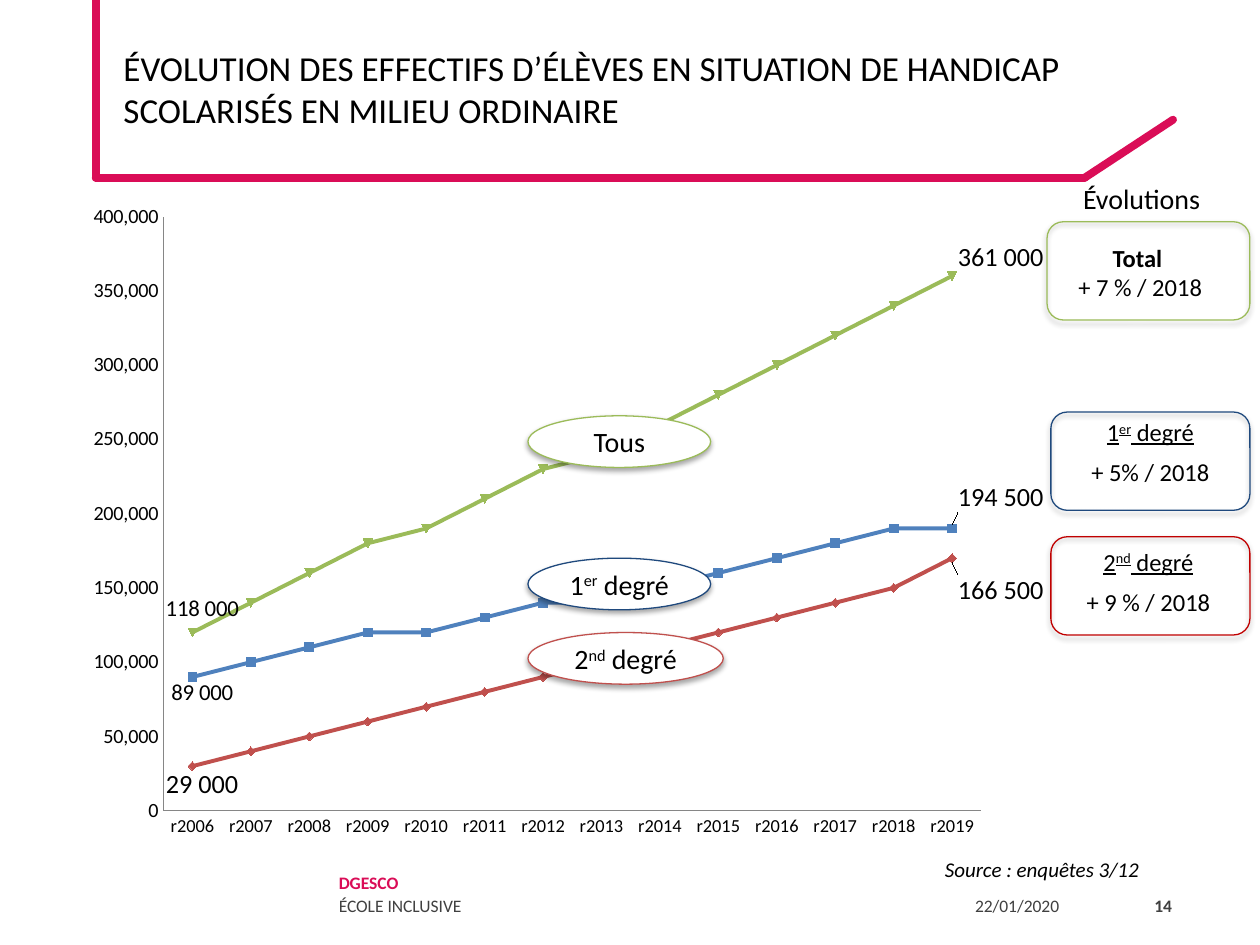
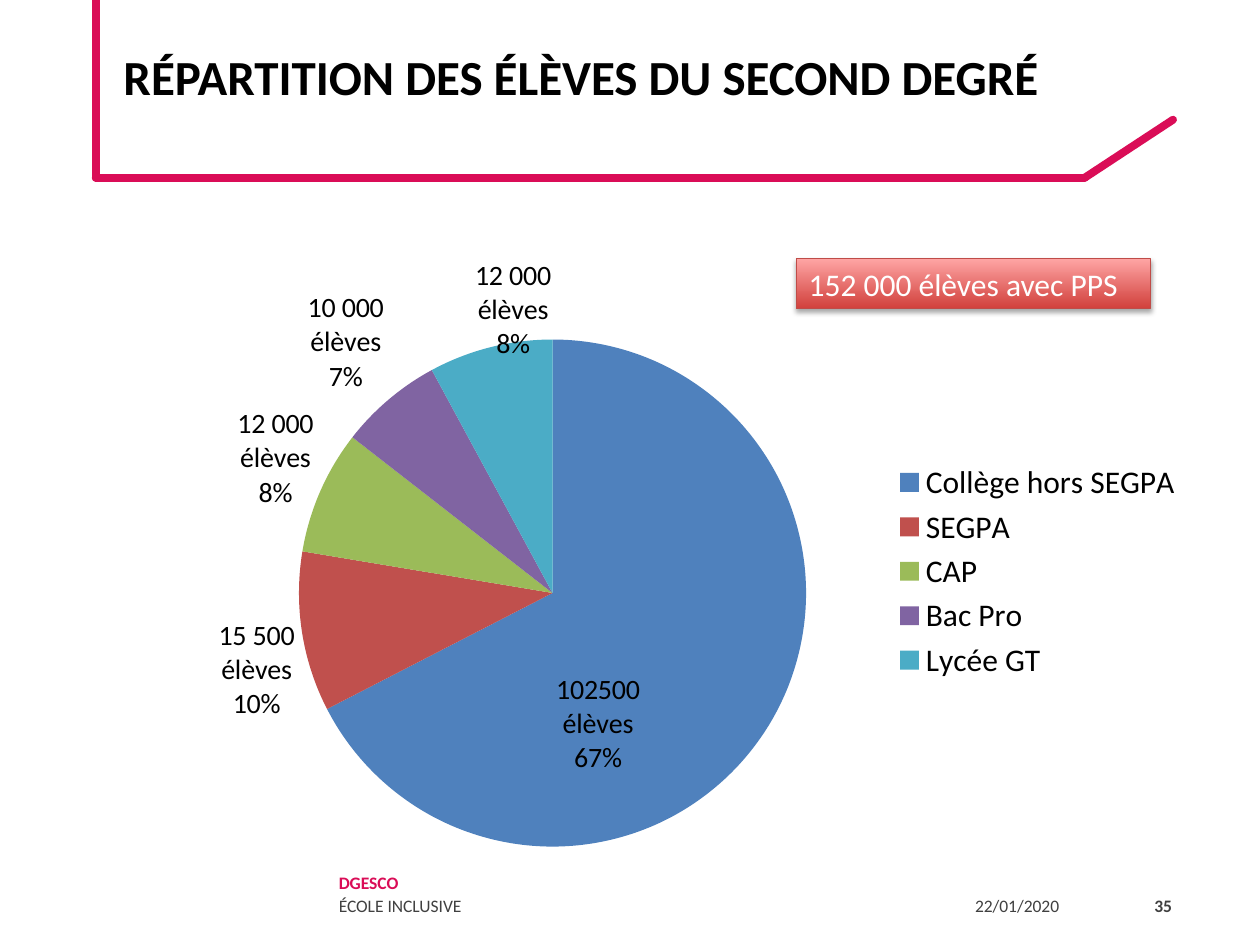
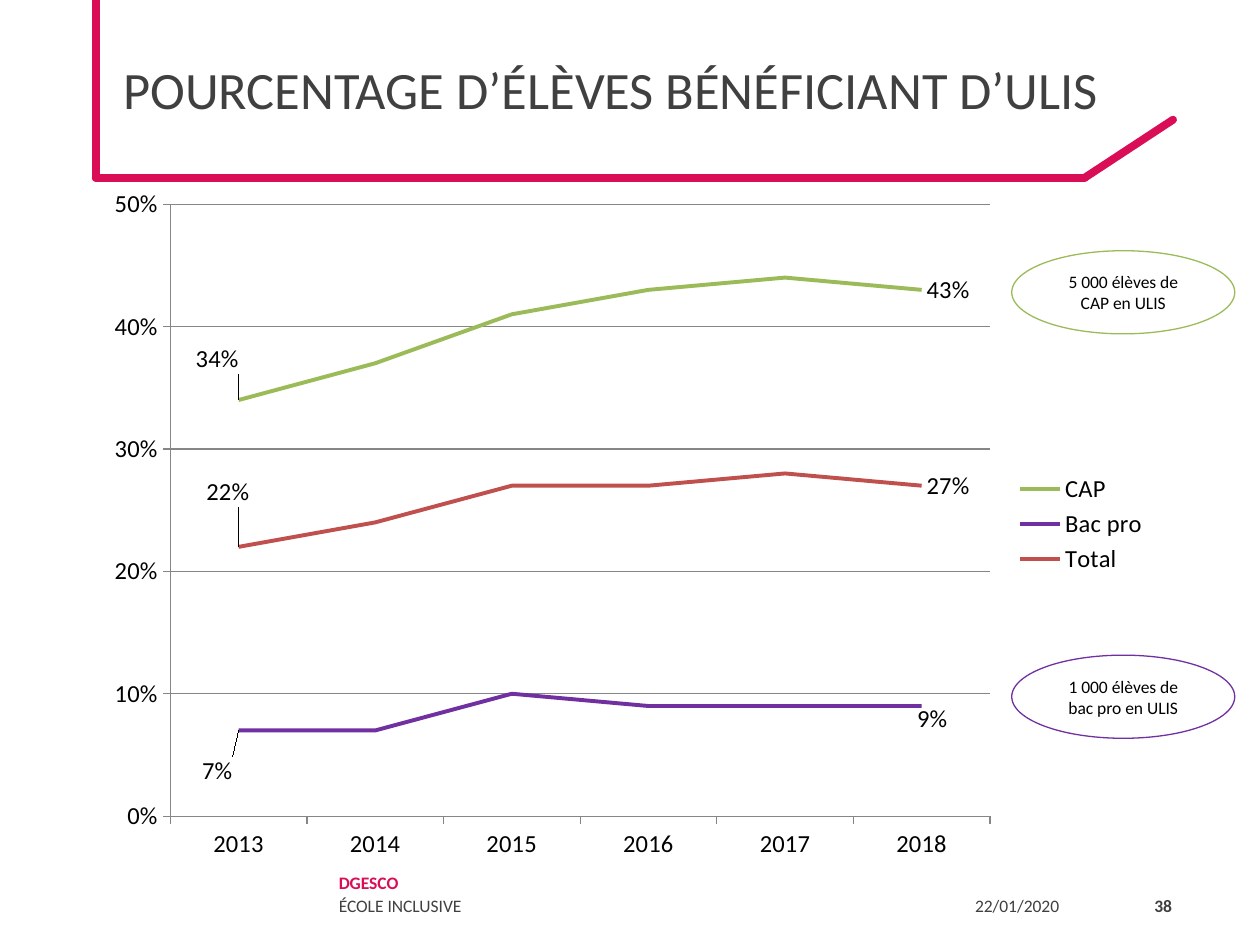
from lxml import etree
from pptx import Presentation
from pptx.chart.data import CategoryChartData
from pptx.dml.color import RGBColor
from pptx.enum.chart import XL_CHART_TYPE as Chart
from pptx.enum.chart import XL_LABEL_POSITION as Place
from pptx.enum.chart import XL_LEGEND_POSITION as LegendPlace
from pptx.enum.chart import XL_TICK_MARK as Tick
from pptx.enum.shapes import MSO_CONNECTOR, MSO_SHAPE
from pptx.enum.text import MSO_ANCHOR as Anchor
from pptx.enum.text import PP_ALIGN as Align
from pptx.oxml import parse_xml
from pptx.oxml.ns import nsdecls, qn
from pptx.util import Inches, Pt

FONT = "Calibri"
BLACK = RGBColor(0x00, 0x00, 0x00)
WHITE = RGBColor(0xFF, 0xFF, 0xFF)
DARK = RGBColor(0x40, 0x40, 0x40)
GREY = RGBColor(0x86, 0x86, 0x86)
PINK = RGBColor(0xDA, 0x0D, 0x57)
BLUE = RGBColor(0x4F, 0x81, 0xBD)
NAVY = RGBColor(0x1F, 0x49, 0x7D)
RED = RGBColor(0xC0, 0x50, 0x4D)
DARK_RED = RGBColor(0xC0, 0x00, 0x00)
GREEN = RGBColor(0x9B, 0xBB, 0x59)
MAUVE = RGBColor(0x80, 0x64, 0xA2)
PURPLE = RGBColor(0x70, 0x30, 0xA0)
TEAL = RGBColor(0x4B, 0xAC, 0xC6)
BANNER_LINE = RGBColor(0xBF, 0x4C, 0x48)
BANNER_STOPS = [RGBColor(0xD1, 0x40, 0x3C), RGBColor(0xFF, 0xA6, 0xA5)]

SHADOW = (
    f'<a:effectLst {nsdecls("a")}><a:outerShdw blurRad="39370" dist="22860" dir="5400000" '
    'rotWithShape="0"><a:srgbClr val="000000"><a:alpha val="35000"/></a:srgbClr>'
    "</a:outerShdw></a:effectLst>"
)
LABEL_SIZE = (
    f'<c:extLst {nsdecls("c")}><c:ext uri="{{CE6537A1-D6FC-4f65-9D91-7224C49458BB}}" '
    'xmlns:c15="http://schemas.microsoft.com/office/drawing/2012/chart"><c15:layout>'
    '<c:manualLayout><c:w val="0.13"/><c:h val="0.1"/></c:manualLayout>'
    "</c15:layout></c:ext></c:extLst>"
)


def write_text(frame, paragraphs, size=14, color=BLACK, bold=False, italic=False,
               align=Align.LEFT, anchor=Anchor.TOP, after=0, spacing=None, wrap=True):
    """Each paragraph is a string or a list of (text, run format) pairs."""
    frame.word_wrap = wrap
    frame.vertical_anchor = anchor
    for number, runs in enumerate(paragraphs):
        paragraph = frame.add_paragraph() if number else frame.paragraphs[0]
        paragraph.alignment = align
        paragraph.space_after = Pt(after)
        if spacing:
            paragraph.line_spacing = Pt(spacing)
        for text, style in [(runs, {})] if isinstance(runs, str) else runs:
            run = paragraph.add_run()
            run.text = text
            run.font.name = FONT
            run.font.size = Pt(size)
            run.font.bold = style.get("bold", bold)
            run.font.italic = italic
            run.font.underline = style.get("underline", False)
            run.font.color.rgb = style.get("color", color)
            if style.get("raised"):
                run.font._element.set("baseline", "30000")


def draw_chart(slide, kind, box, categories, series_list, plot_box, size,
               number_format="General", legend_size=None):
    """A series is (name, values, colours, labels);
    a label is (point, lines, place, size, shift x, shift y)."""
    data = CategoryChartData(number_format=number_format)
    data.categories = categories
    for name, values, *_ in series_list:
        data.add_series(name, values)
    chart = slide.shapes.add_chart(kind, *map(Inches, box), data).chart
    chart.has_title = False
    chart.font.name = FONT
    chart.font.size = Pt(size)
    chart.font.color.rgb = BLACK
    chart.has_legend = legend_size is not None
    if chart.has_legend:
        chart.legend.position = LegendPlace.RIGHT
        chart.legend.include_in_layout = False
        chart.legend.font.size = Pt(legend_size)
    is_pie = kind == Chart.PIE
    plot = chart.plots[0]
    plot.vary_by_categories = is_pie

    plot_area = chart._chartSpace.chart.plotArea
    for layout in plot_area.findall(qn("c:layout")):
        plot_area.remove(layout)
    layouts = [(plot_area, 0, plot_box)]
    for series, (_, _, colors, labels) in zip(plot.series, series_list):
        if is_pie:
            for number, color in enumerate(colors):
                fill = series.points[number].format.fill
                fill.solid()
                fill.fore_color.rgb = color
        else:
            series.smooth = False
            series.format.line.color.rgb = colors[0]
            series.format.line.width = Pt(2.25)
            if kind == Chart.LINE_MARKERS:
                series.marker.format.fill.solid()
                series.marker.format.fill.fore_color.rgb = colors[0]
                series.marker.format.line.color.rgb = colors[0]
        series.data_labels.show_value = is_pie
        series.data_labels.show_percentage = is_pie
        for point, lines, place, label_size, *shift in labels:
            label = series.points[point].data_label
            if lines:
                write_text(label.text_frame, lines, size=label_size, align=Align.CENTER)
            else:
                label.font.size = Pt(label_size)
            label.position = place
            element = series.data_labels._element.xpath(f'c:dLbl[c:idx/@val="{point}"]')[0]
            layouts.append((element, 1, shift))
            if lines and len(lines) == 2:
                element.append(parse_xml(LABEL_SIZE))

    # Manual layouts of the plot area and of the labels
    for parent, index, numbers in layouts:
        layout = parse_xml(f'<c:layout {nsdecls("c")}><c:manualLayout/></c:layout>')
        settings = list(zip("xywh", numbers))
        if parent is plot_area:
            settings = [("layoutTarget", "inner"), ("xMode", "edge"), ("yMode", "edge")] + settings
        for tag, value in settings:
            etree.SubElement(layout[0], qn(f"c:{tag}")).set("val", str(value))
        parent.insert(index, layout)
    return chart


presentation = Presentation()
presentation.slide_width = Inches(10)
presentation.slide_height = Inches(7.5)

# Frame, title and footer of every slide
FRAME_LINES = [
    (0.76, 1.41, 8.61, 1.41),
    (8.61, 1.41, 9.31, 0.95),
    (0.76, 1.41, 0.76, 0),
]
MIDDLE = dict(size=10, color=DARK, anchor=Anchor.MIDDLE)
titles = [
    ("14", "ÉVOLUTION DES EFFECTIFS D’ÉLÈVES EN SITUATION DE HANDICAP "
           "SCOLARISÉS EN MILIEU ORDINAIRE", 20, BLACK, False, 0.05),
    ("35", "RÉPARTITION DES ÉLÈVES DU SECOND DEGRÉ", 28, BLACK, True, 0.26),
    ("38", "POURCENTAGE D’ÉLÈVES BÉNÉFICIANT D’ULIS", 30, DARK, False, 0.05),
]
for page, title, size, color, bold, bottom in titles:
    slide = presentation.slides.add_slide(presentation.slide_layouts[5])
    for x1, y1, x2, y2 in FRAME_LINES:
        line = slide.shapes.add_connector(
            MSO_CONNECTOR.STRAIGHT, Inches(x1), Inches(y1), Inches(x2), Inches(y2))
        line.line.color.rgb = PINK
        line.line.width = Pt(4.5)
        properties = line._element.spPr
        properties.find(qn("a:ln")).set("cap", "rnd")
        etree.SubElement(properties, qn("a:effectLst"))
    shape = slide.shapes.title
    shape.left, shape.top, shape.width, shape.height = map(Inches, (0.88, 0, 8.62, 1.41))
    shape.text_frame.margin_bottom = Inches(bottom)
    write_text(shape.text_frame, [title], size=size, color=color, bold=bold,
               anchor=Anchor.MIDDLE)
    footers = [
        ((2.59, 6.72, 5.05, 0.74),
         [[("DGESCO", dict(color=PINK, bold=True))], "ÉCOLE INCLUSIVE"], dict(spacing=13.2)),
        ((7.64, 6.98, 1.27, 0.4), ["22/01/2020"], dict(spacing=13.2)),
        ((8.91, 6.99, 0.49, 0.4), [page], dict(bold=True, align=Align.RIGHT)),
    ]
    for box, paragraphs, style in footers:
        shape = slide.shapes.add_textbox(*map(Inches, box))
        write_text(shape.text_frame, paragraphs, **MIDDLE, **style)

growth_slide, split_slide, ulis_slide = presentation.slides

# Slide 1: pupils by year
growth_series = [
    ("Series 1",
     [90000, 100000, 110000, 120000, 120000, 130000, 140000, 140000, 150000, 160000,
      170000, 180000, 190000, 190000], [BLUE],
     [(0, ["89 000"], Place.BELOW, 13, 0.01, -0.01),
      (13, ["194 500"], Place.ABOVE, 15, 0.05, -0.01)]),
    ("Series 2",
     [30000, 40000, 50000, 60000, 70000, 80000, 90000, 100000, 110000, 120000,
      130000, 140000, 150000, 170000], [RED],
     [(0, ["29 000"], Place.BELOW, 15, 0.01, -0.01),
      (13, ["166 500"], Place.BELOW, 15, 0.05, 0.01)]),
    ("Series 3",
     [120000, 140000, 160000, 180000, 190000, 210000, 230000, 240000, 260000, 280000,
      300000, 320000, 340000, 360000], [GREEN],
     [(0, ["118 000"], Place.ABOVE, 13, 0.01, 0),
      (13, ["361 000"], Place.ABOVE, 15, 0.05, 0.01)]),
]
growth_chart = draw_chart(
    growth_slide, Chart.LINE_MARKERS, (0.6, 1.51, 7.73, 5.24),
    [f"r{year}" for year in range(2006, 2020)], growth_series,
    (0.09, 0.04, 0.84, 0.9), 10, number_format="#,##0")

# Slide 2: pupils by kind of school
split_labels = [
    (0, ["102500", "élèves", "67%"], Place.CENTER, 16, -0.06, 0.09),
    (1, ["15 500", "élèves 10%"], Place.OUTSIDE_END, 16, 0, -0.02),
    (2, ["12 000", "élèves", "8%"], Place.OUTSIDE_END, 16, 0, 0.03),
    (3, ["10 000", "élèves", "7%"], Place.OUTSIDE_END, 16, 0, 0),
    (4, ["12 000", "élèves", "8%"], Place.OUTSIDE_END, 16, 0.06, 0.03),
]
split_chart = draw_chart(
    split_slide, Chart.PIE, (1.19, 1.66, 8.3, 5.75),
    ["Collège hors SEGPA", "SEGPA", "CAP", "Bac Pro", "Lycée GT"],
    [("Series 1", [102500, 15500, 12000, 10000, 12000],
      [BLUE, RED, GREEN, MAUVE, TEAL], split_labels)],
    (0.14, 0.18, 0.49, 0.7), 10, legend_size=18)
college_label = split_chart.plots[0].series[0].points[0].data_label
college_label.text_frame.paragraphs[-1].space_before = Pt(14)

# Slide 3: share of pupils in ULIS
ulis_series = [
    ("CAP", [0.34, 0.37, 0.41, 0.43, 0.44, 0.43], [GREEN],
     [(0, None, Place.ABOVE, 14, -0.02, -0.03), (5, None, Place.RIGHT, 14, 0, 0)]),
    ("Bac pro", [0.07, 0.07, 0.1, 0.09, 0.09, 0.09], [PURPLE],
     [(0, None, Place.BELOW, 14, -0.02, 0.03), (5, None, Place.BELOW, 14, 0.01, -0.01)]),
    ("Total", [0.22, 0.24, 0.27, 0.27, 0.28, 0.27], [RED],
     [(0, None, Place.ABOVE, 14, -0.01, -0.05), (5, None, Place.RIGHT, 14, 0, 0)]),
]
ulis_chart = draw_chart(
    ulis_slide, Chart.LINE, (0.76, 1.4, 8.45, 5.52),
    [str(year) for year in range(2013, 2019)], ulis_series,
    (0.07, 0.04, 0.77, 0.88), 14, number_format="0%", legend_size=14)

# Axes of the two line charts
axes = [
    (growth_chart, 400000, 50000, "#,##0", Tick.NONE, False, 10.5, 11.5),
    (ulis_chart, 0.5, 0.1, "0%", Tick.OUTSIDE, True, 14, 14),
]
for chart, maximum, step, number_format, tick, grid, category_size, value_size in axes:
    for axis, size in [(chart.category_axis, category_size), (chart.value_axis, value_size)]:
        axis.major_tick_mark = tick
        axis.minor_tick_mark = Tick.NONE
        axis.has_major_gridlines = False
        axis.format.line.color.rgb = GREY
        axis.format.line.width = Pt(0.75)
        axis.tick_labels.font.size = Pt(size)
    axis = chart.value_axis
    axis.minimum_scale = 0
    axis.maximum_scale = maximum
    axis.major_unit = step
    axis.tick_labels.number_format = number_format
    axis.tick_labels.number_format_is_linked = False
    axis.has_major_gridlines = grid
    if grid:
        axis.major_gridlines.format.line.color.rgb = GREY
        axis.major_gridlines.format.line.width = Pt(0.75)

# Outlined boxes, ovals and banner
first_degree = [("1", {}), ("er", dict(raised=True)), (" degré", {})]
second_degree = [("2", {}), ("nd", dict(raised=True)), (" degré", {})]
ROUND, OVAL, RECT = MSO_SHAPE.ROUNDED_RECTANGLE, MSO_SHAPE.OVAL, MSO_SHAPE.RECTANGLE
callouts = [
    (growth_slide, ROUND, (8.31, 1.76, 1.61, 0.78), GREEN, None, 14),
    (growth_slide, ROUND, (8.34, 3.27, 1.58, 0.78), NAVY, None, 14),
    (growth_slide, ROUND, (8.34, 4.26, 1.58, 0.78), DARK_RED, None, 14),
    (growth_slide, OVAL, (4.19, 3.3, 1.45, 0.41), GREEN, "Tous", 16),
    (growth_slide, OVAL, (4.19, 4.43, 1.45, 0.41), NAVY, first_degree, 16),
    (growth_slide, OVAL, (4.19, 5.02, 1.55, 0.41), RED, second_degree, 16),
    (split_slide, RECT, (6.32, 2.05, 2.81, 0.4), BANNER_LINE, "152 000 élèves avec PPS", 18),
    (ulis_slide, OVAL, (8.03, 1.99, 1.77, 0.66), GREEN, "5 000 élèves de CAP en ULIS", 10),
    (ulis_slide, OVAL, (8.03, 5.2, 1.77, 0.66), PURPLE, "1 000 élèves de bac pro en ULIS", 10),
]
for slide, geometry, box, color, text, size in callouts:
    shape = slide.shapes.add_shape(geometry, *map(Inches, box))
    shape.line.color.rgb = color
    shape.line.width = Pt(0.75)
    if geometry == ROUND:
        shape.fill.background()
    elif geometry == RECT:
        shape.fill.gradient()
        shape.fill.gradient_angle = 90
        for stop, stop_color in zip(shape.fill.gradient_stops, BANNER_STOPS):
            stop.color.rgb = stop_color
    else:
        shape.fill.solid()
        shape.fill.fore_color.rgb = WHITE
    if slide is ulis_slide:
        shape.shadow.inherit = False
    else:
        shape._element.spPr.append(parse_xml(SHADOW))
    if text:
        is_banner = geometry == RECT
        write_text(shape.text_frame, [text], size=size, anchor=Anchor.MIDDLE,
                   color=WHITE if is_banner else BLACK,
                   align=Align.LEFT if is_banner else Align.CENTER)

# Texts beside the growth chart
underlined_first, underlined_second = [
    [(text, dict(style, underline=True)) for text, style in runs]
    for runs in (first_degree, second_degree)
]
CENTERED = dict(align=Align.CENTER)
notes = [
    ((8.49, 1.39, 1.14, 0.37), ["Évolutions"], dict(CENTERED, size=16, wrap=False)),
    ((8.15, 1.88, 1.8, 0.57), [[("Total ", dict(bold=True))], "+ 7 % / 2018"], CENTERED),
    ((8.34, 3.26, 1.58, 0.66), [underlined_first, "+ 5% / 2018"], dict(CENTERED, after=6)),
    ((8.31, 4.29, 1.61, 0.66), [underlined_second, "+ 9 % / 2018"], dict(CENTERED, after=6)),
    ((7.4, 6.75, 2.55, 0.45), ["Source : enquêtes 3/12"], dict(size=12, italic=True)),
]
for box, paragraphs, style in notes:
    shape = growth_slide.shapes.add_textbox(*map(Inches, box))
    write_text(shape.text_frame, paragraphs, **style)

presentation.save("out.pptx")
